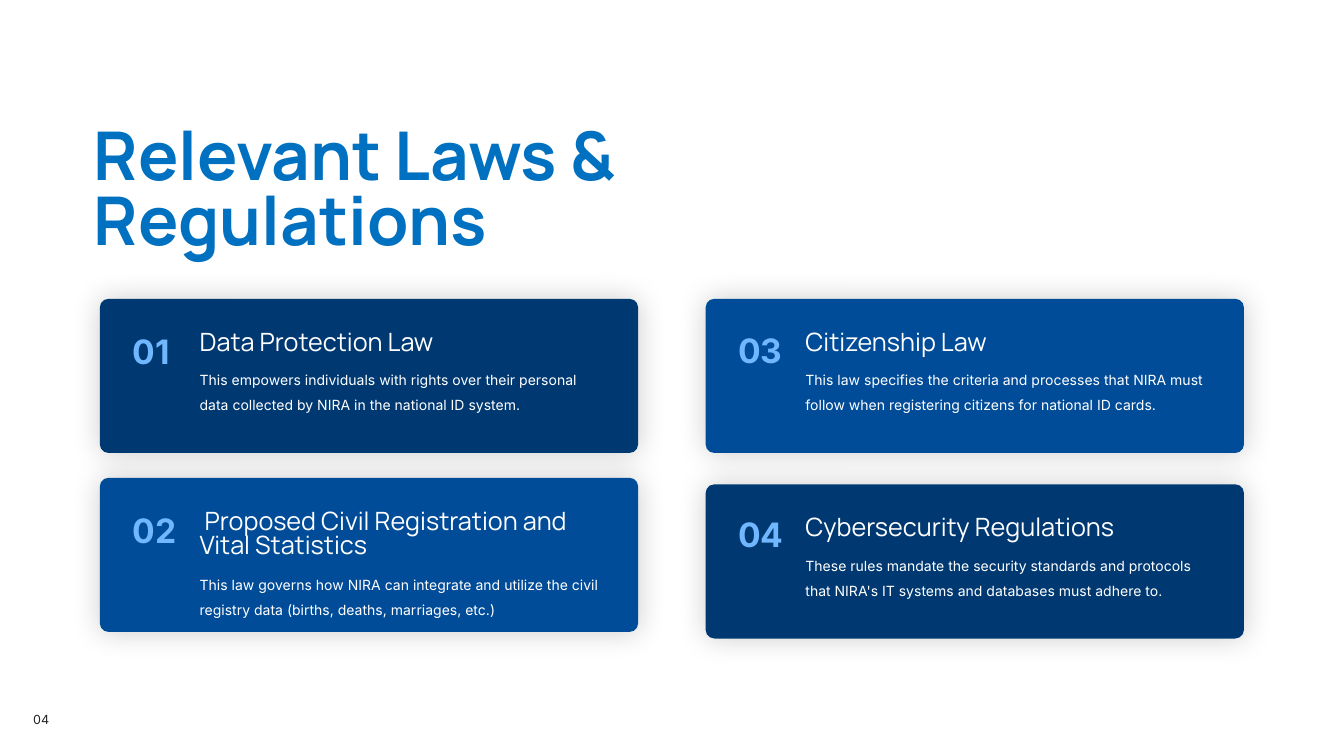
from lxml import etree
from pptx import Presentation
from pptx.dml.color import RGBColor
from pptx.enum.shapes import MSO_SHAPE
from pptx.enum.text import MSO_ANCHOR, MSO_AUTO_SIZE, PP_ALIGN
from pptx.oxml.ns import qn
from pptx.util import Cm, Pt

ROUNDED = MSO_SHAPE.ROUNDED_RECTANGLE
TOP = MSO_ANCHOR.TOP
LEFT = PP_ALIGN.LEFT
GROW = MSO_AUTO_SIZE.SHAPE_TO_FIT_TEXT
FIXED = MSO_AUTO_SIZE.NONE

COLORS = {
    "title": "0070C0",
    "navy": "003972",
    "blue": "004C98",
    "number": "70B7FF",
    "white": "FFFFFF",
    "dark": "222222",
    "shadow": "000000",
}
HEADING_FONT = "Manrope"
BODY_FONT = "Inter"

# Card geometry in centimetres
CARD_WIDTH, CARD_HEIGHT = 27.13, 7.77
COLUMNS = (5.03, 35.56)
FIRST_ROW = 15.06
NUMBER_INSET, TEXT_INSET, HEADING_DROP = 1.4, 4.78, 1.55

# column, top, fill, number drop, body drop, number, heading, body
CARDS = [
    (0, FIRST_ROW, "navy", 0.48, 3.12, "01", "Data Protection Law",
     "This empowers individuals with rights over their personal data "
     "collected by NIRA in the national ID system."),
    (0, 24.08, "blue", 0.48, 4.42, "02",
     " Proposed Civil Registration and Vital Statistics",
     "This law governs how NIRA can integrate and utilize the civil "
     "registry data (births, deaths, marriages, etc.)"),
    (1, FIRST_ROW, "blue", 0.43, 3.12, "03", "Citizenship Law",
     "This law specifies the criteria and processes that NIRA must follow "
     "when registering citizens for national ID cards."),
    (1, 24.41, "navy", 0.36, 3.12, "04", "Cybersecurity Regulations",
     "These rules mandate the security standards and protocols that NIRA's "
     "IT systems and databases must adhere to."),
]


def write_text(shape, text, *, font, size, color, bold=False, spacing=1.0, fit=GROW):
    frame = shape.text_frame
    frame.word_wrap = True
    frame.auto_size = fit
    frame.vertical_anchor = TOP
    paragraph = frame.paragraphs[0]
    paragraph.alignment = LEFT
    paragraph.line_spacing = spacing
    run = paragraph.add_run()
    run.text = text
    run.font.name = font
    run.font.size = Pt(size)
    run.font.bold = bold
    run.font.color.rgb = RGBColor.from_string(COLORS[color])


class SlideBuilder:
    def __init__(self, slide):
        self.slide = slide

    def title(self, left, top, width, height, text):
        shape = self.slide.shapes.title
        shape.left, shape.top = Cm(left), Cm(top)
        shape.width, shape.height = Cm(width), Cm(height)
        write_text(shape, text, font=HEADING_FONT, size=96, color="title",
                   bold=True, spacing=0.8, fit=FIXED)

    def text(self, left, top, width, height, text, **style):
        shape = self.slide.shapes.add_textbox(Cm(left), Cm(top), Cm(width), Cm(height))
        write_text(shape, text, **style)

    def panel(self, left, top, fill):
        shape = self.slide.shapes.add_shape(
            ROUNDED, Cm(left), Cm(top), Cm(CARD_WIDTH), Cm(CARD_HEIGHT))
        shape.adjustments[0] = 0.057
        shape.fill.solid()
        shape.fill.fore_color.rgb = RGBColor.from_string(COLORS[fill])
        shape.line.fill.background()
        # Soft glow-like shadow, 20 % black
        shape.shadow.inherit = False
        effects = shape._element.spPr.find(qn("a:effectLst"))
        shadow = etree.SubElement(effects, qn("a:outerShdw"), blurRad=str(Pt(42)),
                                  dist="0", dir="0", algn="ctr", rotWithShape="0")
        color = etree.SubElement(shadow, qn("a:srgbClr"), val=COLORS["shadow"])
        etree.SubElement(color, qn("a:alpha"), val="20000")

    def card(self, column, top, fill, number_drop, body_drop, number, heading, body):
        left = COLUMNS[column]
        text_left = left + TEXT_INSET
        self.panel(left, top, fill)
        self.text(left + NUMBER_INSET, top + number_drop, 3.4, 2.97, number,
                  font=BODY_FONT, size=48, color="number", bold=True, spacing=1.5)
        self.text(text_left, top + HEADING_DROP, 21.23, body_drop - HEADING_DROP, heading,
                  font=HEADING_FONT, size=36, color="white", spacing=0.8)
        self.text(text_left, top + body_drop, 20.62, 2.67, body,
                  font=BODY_FONT, size=20, color="white", spacing=1.5)


def main():
    presentation = Presentation()
    presentation.slide_width = Cm(67.73)
    presentation.slide_height = Cm(38.1)
    title_only = presentation.slide_layouts[5]
    builder = SlideBuilder(presentation.slides.add_slide(title_only))

    # Title
    builder.title(4.47, 6.38, 30.05, 6.96, "Relevant Laws & Regulations")

    # Law cards
    for card in CARDS:
        builder.card(*card)

    # Page number
    builder.text(1.42, 35.76, 5.33, 1.02, "04", font=BODY_FONT, size=18, color="dark")

    presentation.save("out.pptx")


if __name__ == "__main__":
    main()
